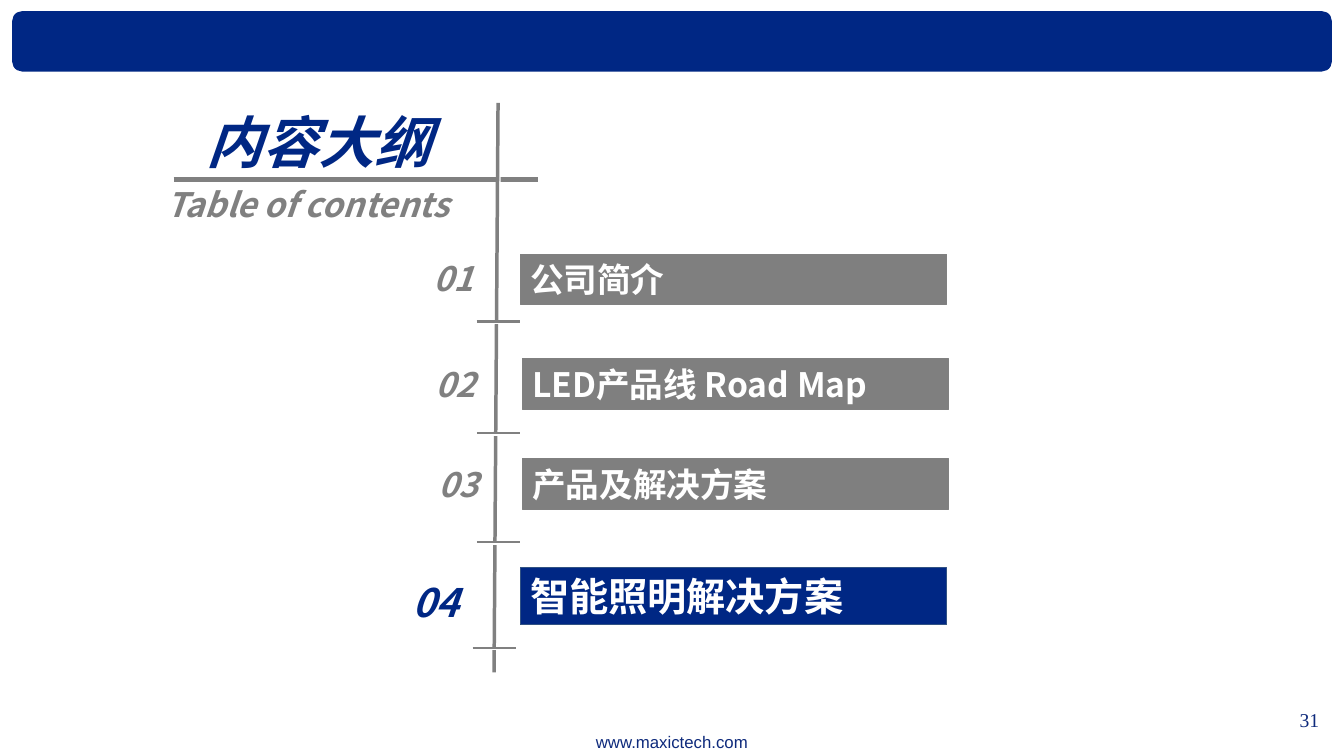
from collections import namedtuple

from lxml import etree
from pptx import Presentation
from pptx.dml.color import RGBColor
from pptx.enum.shapes import MSO_CONNECTOR as Conn, MSO_SHAPE as Shape
from pptx.enum.text import MSO_ANCHOR as Anchor, MSO_AUTO_SIZE as AutoSize, PP_ALIGN as Align
from pptx.oxml.ns import qn
from pptx.util import Inches, Pt

COLORS = {"navy": "002784", "footer": "0E2A7C", "gray": "808080", "bar": "7F7F7F",
          "edge": "315283", "white": "FFFFFF"}
CJK = "Noto Sans CJK SC"
WIDTH, HEIGHT = Inches(13.33), Inches(7.5)
COL, ROW = WIDTH / 100, HEIGHT / 100
Box = namedtuple("Box", "x y w h")
Item = namedtuple("Item", "number label box number_box tick active")

BAR_W, BAR_H = 31.73, 6.67
ITEMS = [
    Item("01", "公司简介", Box(38.7, 33.6, BAR_W, BAR_H),
         Box(-7.2, -0.13, 5.03, BAR_H), (-3.23, 8.93), False),
    Item("02", "LED产品线 Road Map", Box(38.86, 47.47, BAR_W, BAR_H),
         Box(-7.2, 0, 5.03, BAR_H), (-3.38, 9.86), False),
    Item("03", "产品及解决方案", Box(38.86, 60.67, BAR_W, BAR_H),
         Box(-6.98, 0, 5.03, BAR_H), (-3.38, 11.06), False),
    Item("04", "智能照明解决方案", Box(38.7, 75.07, BAR_W, 7.6),
         Box(-8.77, 0.8, 6.6, 7.6), (-3.53, 10.66), True),
]


def rgb(name):
    """Return a palette colour."""
    return RGBColor.from_string(COLORS[name])


def inside(box, x, y, w, h):
    """Return a box offset from the corner of another, in grid units."""
    return Box(box.x + x, box.y + y, w, h)


def emu(box):
    """Convert grid columns and rows to slide lengths."""
    return int(box.x * COL), int(box.y * ROW), int(box.w * COL), int(box.h * ROW)


def write(sp, text, size, color, font=CJK, bold=True, italic=False, align=Align.LEFT,
          anchor=Anchor.TOP, wrap=True):
    """Put one formatted run into a shape."""
    tf = sp.text_frame
    tf.auto_size = AutoSize.NONE
    tf.word_wrap = wrap
    tf.vertical_anchor = anchor
    p = tf.paragraphs[0]
    p.alignment = align
    r = p.add_run()
    r.text = text
    r.font.size = Pt(size)
    r.font.name = font
    r.font.bold = bold
    r.font.italic = italic
    r.font.color.rgb = rgb(color)
    ea = etree.SubElement(r.font._element, qn("a:ea"))
    ea.set("typeface", font)


def add_text(slide, box, *args, **style):
    """Add a text box."""
    sp = slide.shapes.add_textbox(*emu(box))
    write(sp, *args, **style)
    return sp


def add_block(slide, kind, box, fill, edge=None):
    """Add a filled shape with an optional thin edge."""
    sp = slide.shapes.add_shape(kind, *emu(box))
    sp.shadow.inherit = False
    sp.fill.solid()
    sp.fill.fore_color.rgb = rgb(fill)
    if edge:
        sp.line.color.rgb = rgb(edge)
        sp.line.width = Pt(0.75)
    else:
        sp.line.fill.background()
    return sp


def add_line(slide, box, width, halo=True):
    """Draw a gray line across a box, with a white offset halo if asked."""
    x, y, w, h = emu(box)
    line = slide.shapes.add_connector(Conn.STRAIGHT, x, y, x + w, y + h)
    line.line.color.rgb = rgb("gray")
    line.line.width = Pt(width)
    effects = etree.SubElement(line._element.spPr, qn("a:effectLst"))
    if halo:
        shadow = etree.SubElement(effects, qn("a:outerShdw"), dist=str(Pt(1.4)),
                                  dir="2700000", algn="ctr", rotWithShape="0")
        etree.SubElement(shadow, qn("a:srgbClr"), val=COLORS["white"])


def add_frame(slide, box):
    """Add the top band, web address and page number."""
    add_text(slide, inside(box, 0, 96.13, 100, 3.87), "www.maxictech.com", 12, "footer",
             font="Arial", bold=False, align=Align.CENTER)
    add_block(slide, Shape.ROUNDED_RECTANGLE, inside(box, 0.9, 1.47, 98.2, 8), "navy")
    add_text(slide, inside(box, 95.4, 93.2, 4.05, 4), "31", 14, "footer",
             font="Times New Roman", bold=False, align=Align.CENTER, anchor=Anchor.MIDDLE)


def add_heading(slide, box):
    """Set the title above a rule, with its subtitle below."""
    title = slide.shapes.title
    title.left, title.top, title.width, title.height = emu(inside(box, 3, 0, 18.4, 10.27))
    write(title, "内容大纲", 40, "navy", italic=True, wrap=False)
    add_line(slide, inside(box, 1.28, 10.13, box.w - 1.28, 0), 4, halo=False)
    add_text(slide, inside(box, 0, 10.13, 23.4, 6.67), "Table of contents", 24, "gray",
             italic=True, wrap=False)


def add_item(slide, item):
    """Add one agenda entry: tick, number and labelled bar."""
    size = 28 if item.active else 24
    add_line(slide, inside(item.box, *item.tick, 3.23, 0), 1.5)
    add_text(slide, inside(item.box, *item.number_box), item.number, size,
             "navy" if item.active else "gray", italic=True)
    fill, edge = ("navy", "edge") if item.active else ("bar", "gray")
    bar = add_block(slide, Shape.RECTANGLE, item.box, fill, edge)
    write(bar, item.label, size, "white")


def main():
    """Build the contents slide."""
    prs = Presentation()
    prs.slide_width, prs.slide_height = WIDTH, HEIGHT
    slide = prs.slides.add_slide(prs.slide_layouts[5])
    add_frame(slide, Box(0, 0, 100, 100))
    add_heading(slide, Box(11.63, 13.6, 28.43, 16.8))
    add_line(slide, Box(37.06, 13.6, -0.3, 75.33), 2.5)
    for item in ITEMS:
        add_item(slide, item)
    prs.save("out.pptx")


if __name__ == "__main__":
    main()
